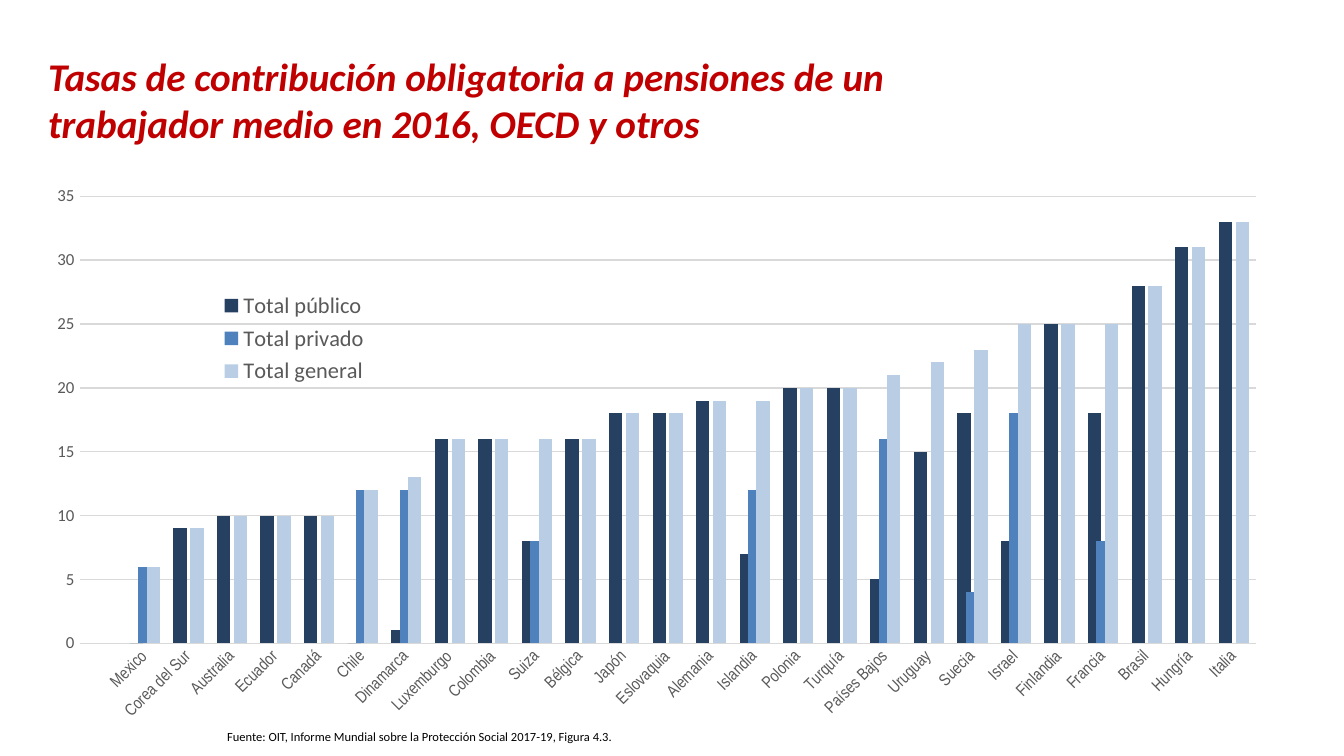
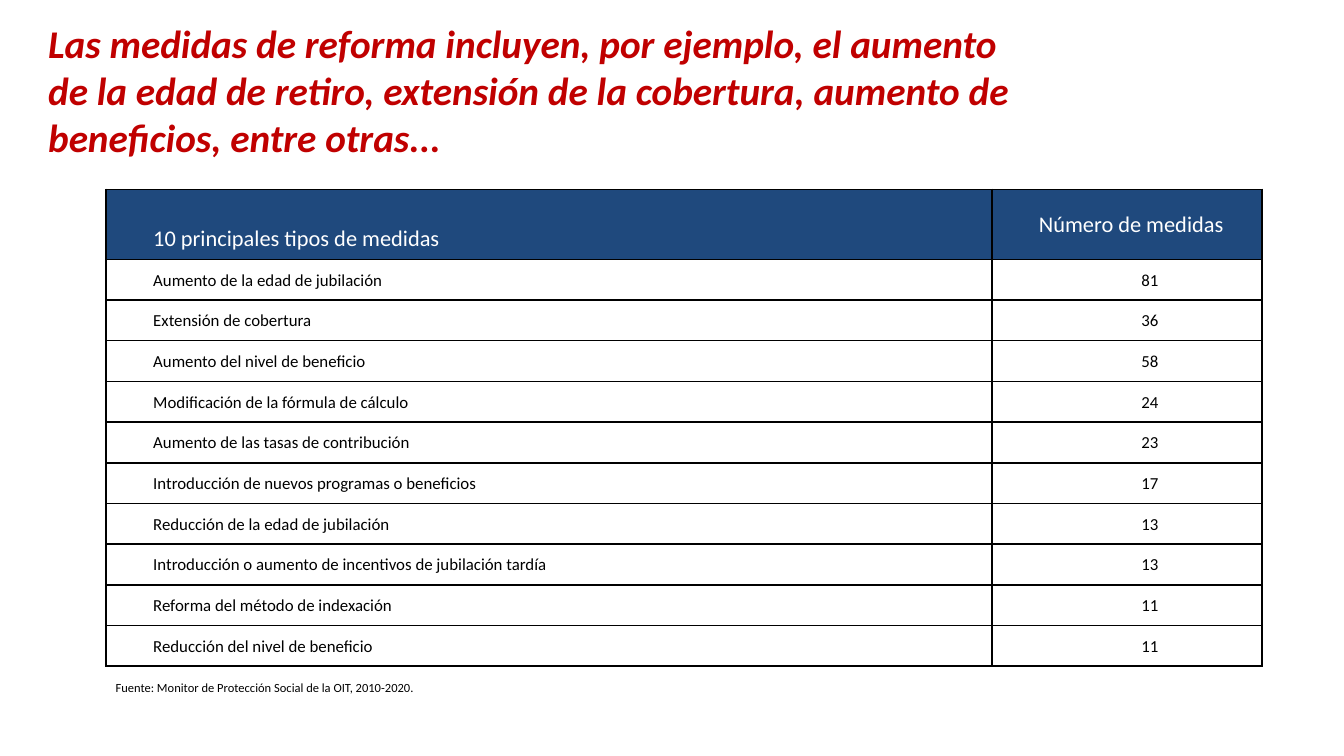
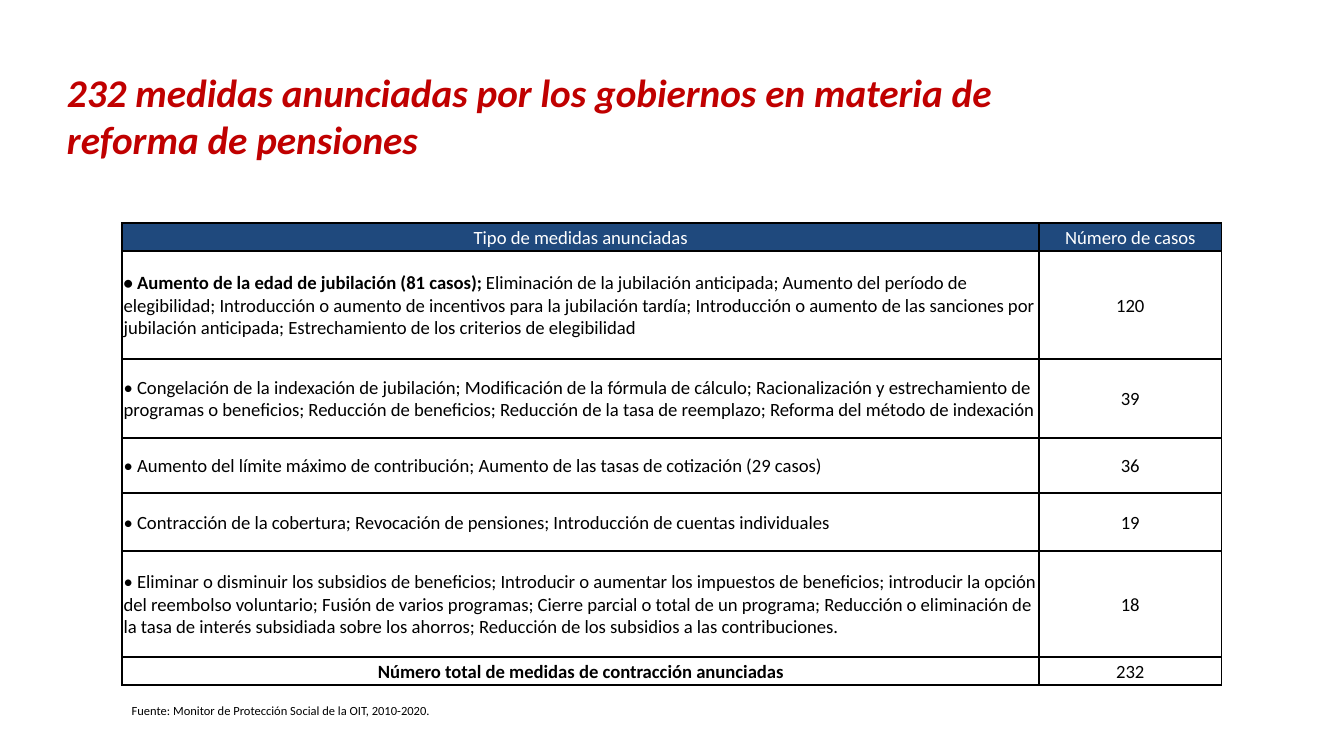
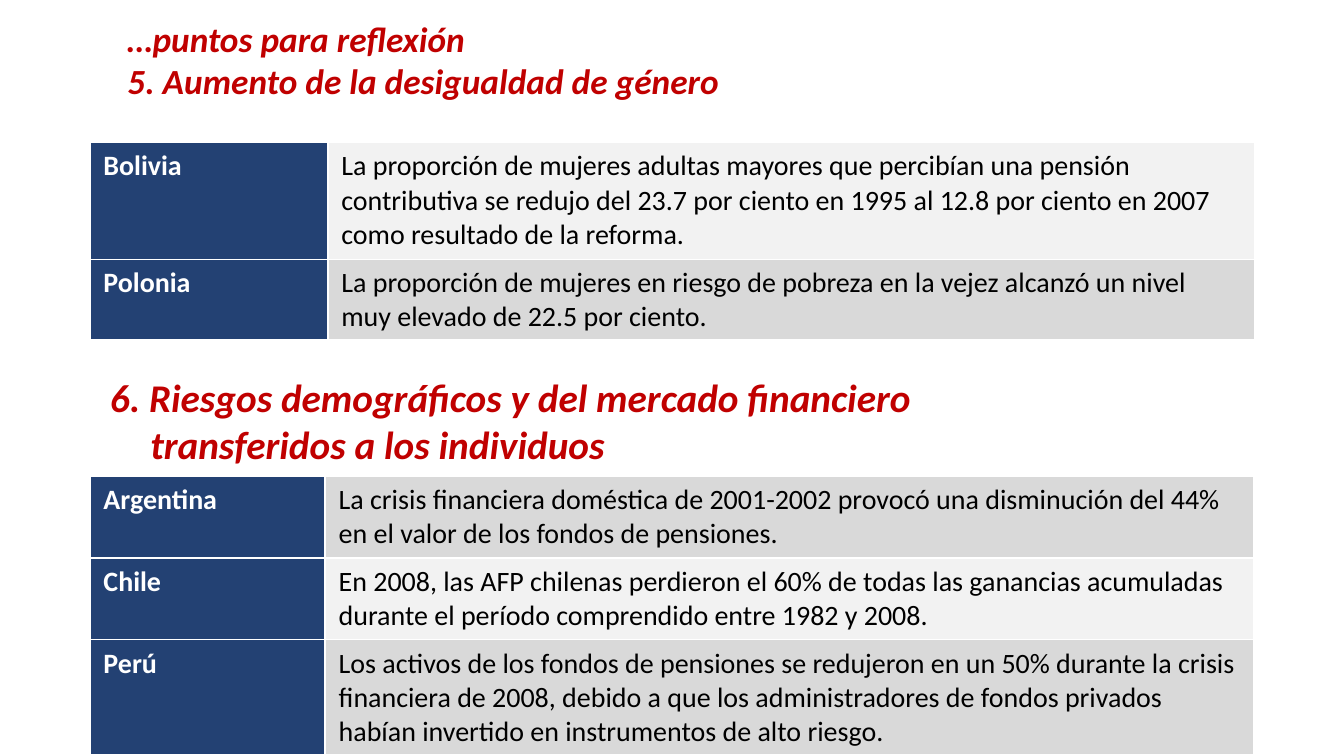
from pptx import Presentation
from pptx import util as u
from pptx.chart.data import CategoryChartData
from pptx.dml.color import RGBColor
from pptx.enum import chart as ch, text as tx
from pptx.oxml import parse_xml
from pptx.oxml.ns import nsdecls, qn

COLORS = {
    "title": "C00000", "ink": "000000", "paper": "FFFFFF", "header": "1F497D",
    "country": "234173", "light": "F2F2F2", "dark": "D9D9D9",
    "axis": "595959", "grid": "D9D9D9",
    "public": "254061", "private": "4F81BD", "total": "B9CDE5",
}
FONT = "Calibri"
SLIDE_WIDTH = 10
SLIDE_HEIGHT = SLIDE_WIDTH * 9 / 16
TITLE_SIZE = 21
MONITOR_SOURCE = "Fuente: Monitor de Protección Social de la OIT, 2010-2020."
LEFT, CENTER = tx.PP_ALIGN.LEFT, tx.PP_ALIGN.CENTER
MIDDLE, TOP = tx.MSO_ANCHOR.MIDDLE, tx.MSO_ANCHOR.TOP

RATES_TITLE = "Tasas de contribución obligatoria a pensiones de un trabajador medio en 2016, OECD y otros"
RATES_SOURCE = "Fuente: OIT, Informe Mundial sobre la Protección Social 2017-19, Figura 4.3."
RATES_SERIES = [("Total público ", "public"), ("Total privado", "private"), ("Total general", "total")]
RATES = [
    ("", None, None, None),
    ("Mexico", 0, 6, 6),
    ("Corea del Sur", 9, None, 9),
    ("Australia", 10, None, 10),
    ("Ecuador", 10, None, 10),
    ("Canadá", 10, None, 10),
    ("Chile", 0, 12, 12),
    ("Dinamarca", 1, 12, 13),
    ("Luxemburgo", 16, None, 16),
    ("Colombia", 16, None, 16),
    ("Suiza", 8, 8, 16),
    ("Bélgica", 16, None, 16),
    ("Japón", 18, None, 18),
    ("Eslovaquia", 18, None, 18),
    ("Alemania", 19, None, 19),
    ("Islandia", 7, 12, 19),
    ("Polonia", 20, None, 20),
    ("Turquía", 20, None, 20),
    ("Países Bajos", 5, 16, 21),
    ("Uruguay", 15, None, 22),
    ("Suecia", 18, 4, 23),
    ("Israel", 8, 18, 25),
    ("Finlandia", 25, None, 25),
    ("Francia", 18, 8, 25),
    ("Brasil", 28, None, 28),
    ("Hungría", 31, None, 31),
    ("Italia", 33, None, 33),
]

REFORMS_TITLE = ("Las medidas de reforma incluyen, por ejemplo, el aumento de la edad de retiro, "
                 "extensión de la cobertura, aumento de beneficios, entre otras...")
REFORMS = [
    ("10 principales tipos de medidas", "Número de medidas"),
    ("Aumento de la edad de jubilación", "81"),
    ("Extensión de cobertura", "36"),
    ("Aumento del nivel de beneficio", "58"),
    ("Modificación de la fórmula de cálculo", "24"),
    ("Aumento de las tasas de contribución", "23"),
    ("Introducción de nuevos programas o beneficios", "17"),
    ("Reducción de la edad de jubilación", "13"),
    ("Introducción o aumento de incentivos de jubilación tardía", "13"),
    ("Reforma del método de indexación", "11"),
    ("Reducción del nivel de beneficio", "11"),
]
REFORMS_HEIGHT, REFORMS_HEADER = 3.55, 0.52

CASES_TITLE = "232 medidas anunciadas por los gobiernos en materia de reforma de pensiones"
CASES_LEAD = "• Aumento de la edad de jubilación (81 casos); "
CASES = [
    ("Tipo de medidas anunciadas", "Número de casos"),
    (CASES_LEAD + "Eliminación de la jubilación anticipada; Aumento del período de elegibilidad; "
     "Introducción o aumento de incentivos para la jubilación tardía; Introducción o aumento de las "
     "sanciones por jubilación anticipada; Estrechamiento de los criterios de elegibilidad", "120"),
    ("• Congelación de la indexación de jubilación; Modificación de la fórmula de cálculo; "
     "Racionalización y estrechamiento de programas o beneficios; Reducción de beneficios; "
     "Reducción de la tasa de reemplazo; Reforma del método de indexación", "39"),
    ("• Aumento del límite máximo de contribución; Aumento de las tasas de cotización (29 casos)", "36"),
    ("• Contracción de la cobertura; Revocación de pensiones; Introducción de cuentas individuales", "19"),
    ("• Eliminar o disminuir los subsidios de beneficios; Introducir o aumentar los impuestos de "
     "beneficios; introducir la opción del reembolso voluntario; Fusión de varios programas; Cierre "
     "parcial o total de un programa; Reducción o eliminación de la tasa de interés subsidiada sobre "
     "los ahorros; Reducción de los subsidios a las contribuciones.", "18"),
    ("Número total de medidas de contracción anunciadas", "232"),
]
CASES_HEIGHTS = [0.21, 0.8, 0.59, 0.41, 0.43, 0.79, 0.21]

GENDER_TITLE = "…puntos para reflexión\n5. Aumento de la desigualdad de género"
GENDER = [
    ("Bolivia", "La proporción de mujeres adultas mayores que percibían una pensión contributiva se "
     "redujo del 23.7 por ciento en 1995 al 12.8 por ciento en 2007 como resultado de la reforma."),
    ("Polonia", "La proporción de mujeres en riesgo de pobreza en la vejez alcanzó un nivel muy "
     "elevado de 22.5 por ciento."),
]
RISKS_TITLE = "6. Riesgos demográficos y del mercado financiero transferidos a los individuos"
RISKS = [
    ("Argentina", "La crisis financiera doméstica de 2001-2002 provocó una disminución del 44% en el "
     "valor de los fondos de pensiones."),
    ("Chile", "En 2008, las AFP chilenas perdieron el 60% de todas las ganancias acumuladas durante "
     "el período comprendido entre 1982 y 2008."),
    ("Perú", "Los activos de los fondos de pensiones se redujeron en un 50% durante la crisis "
     "financiera de 2008, debido a que los administradores de fondos privados habían invertido en "
     "instrumentos de alto riesgo."),
]


def rgb(name):
    return RGBColor.from_string(COLORS[name])


def set_font(font, size, color, bold=False, italic=False, name=FONT):
    font.name, font.size = name, u.Pt(size)
    font.bold, font.italic = bold, italic
    font.color.rgb = rgb(color)


def set_margins(target, margins):
    (target.margin_left, target.margin_top,
     target.margin_right, target.margin_bottom) = [u.Inches(m) for m in margins]


def add_text(slide, box, words, size, color, anchor=TOP, strong=False, margins=(0.1, 0.05, 0.1, 0.05)):
    frame = slide.shapes.add_textbox(*[u.Inches(v) for v in box]).text_frame
    frame.word_wrap = True
    frame.vertical_anchor = anchor
    set_margins(frame, margins)
    paragraph = frame.paragraphs[0]
    paragraph.text = words
    for run in paragraph.runs:
        set_font(run.font, size, color, strong, strong)
    return paragraph


def add_title(slide, box, words, size=TITLE_SIZE):
    return add_text(slide, box, words, size, "title", MIDDLE, True)


def add_source(slide, left, top, width, words=MONITOR_SOURCE):
    add_text(slide, (left, top, width, 0.19), words, 6.75, "ink", margins=(0.07, 0.04, 0.07, 0.04))


def set_borders(cell, color):
    properties = cell._tc.get_or_add_tcPr()
    for side in "LRTB":
        properties.append(parse_xml(
            f'<a:ln{side} {nsdecls("a")} w="12700"><a:solidFill>'
            f'<a:srgbClr val="{COLORS[color]}"/></a:solidFill></a:ln{side}>'))


def add_grid(slide, left, top, widths, heights, rows, border, style):
    box = [u.Inches(v) for v in (left, top, sum(widths), sum(heights))]
    table = slide.shapes.add_table(len(rows), len(widths), *box).table
    table.first_row = table.horz_banding = False
    for column, width in zip(table.columns, widths):
        column.width = u.Inches(width)
    for r, (row, height, entries) in enumerate(zip(table.rows, heights, rows)):
        row.height = u.Inches(height)
        for c, (cell, words) in enumerate(zip(row.cells, entries)):
            look = style(r, c)
            set_borders(cell, border)
            if look["fill"]:
                cell.fill.solid()
                cell.fill.fore_color.rgb = rgb(look["fill"])
            else:
                cell.fill.background()
            cell.vertical_anchor = look.get("anchor", MIDDLE)
            set_margins(cell, look["margins"])
            paragraph = cell.text_frame.paragraphs[0]
            paragraph.alignment = look.get("align", LEFT)
            lead = CASES_LEAD if words.startswith(CASES_LEAD) else ""
            for part, bold in ((lead, True), (words[len(lead):], look.get("bold", False))):
                if part:
                    run = paragraph.add_run()
                    run.text = part
                    set_font(run.font, look["size"], look["color"], bold)


def reforms_style(r, c):
    if r == 0:
        label = c == 0
        return dict(fill="header", color="paper", size=12,
                    anchor=tx.MSO_ANCHOR.BOTTOM if label else MIDDLE,
                    margins=(0.35, 0.01, 0.01, 0.05 if label else 0))
    return dict(fill=None, color="ink", size=9, margins=(0.35, 0.01, 0.01, 0),
                align=CENTER if c else LEFT)


def cases_style(r, c):
    last = r == len(CASES) - 1
    return dict(fill=None if r else "header", color="ink" if r else "paper", size=10,
                margins=(0.01, 0.01, 0.01, 0), bold=last and c == 0,
                align=CENTER if c or last or r == 0 else LEFT)


def country_style(bands):
    def style(r, c):
        return dict(fill=bands[r % 2] if c else "country", color="ink" if c else "paper",
                    size=15, bold=c == 0, anchor=TOP, margins=(0.1, 0.05, 0.1, 0.05))
    return style


def manual_layout(x, y, w, h, inner=False):
    target = '<c:layoutTarget val="inner"/>' if inner else ""
    sizes = "".join(f'<c:{k} val="{v}"/>' for k, v in zip("xywh", (x, y, w, h)))
    return parse_xml(f'<c:layout {nsdecls("c")}><c:manualLayout>{target}<c:xMode val="edge"/>'
                     f'<c:yMode val="edge"/>{sizes}</c:manualLayout></c:layout>')


def place(element, layout, index):
    for old in element.findall(qn("c:layout")):
        element.remove(old)
    element.insert(index, layout)


def add_rates_chart(slide, box):
    data = CategoryChartData(number_format="General")
    countries, *columns = zip(*RATES)
    data.categories = countries
    for (name, _), values in zip(RATES_SERIES, columns):
        data.add_series(name, values)
    chart = slide.shapes.add_chart(ch.XL_CHART_TYPE.COLUMN_CLUSTERED,
                                   *[u.Inches(v) for v in box], data).chart
    chart.has_title = False
    set_font(chart.font, 10, "ink")
    plot = chart.plots[0]
    plot.gap_width, plot.overlap, plot.vary_by_categories = 100, 37, False
    for series, (_, color) in zip(plot.series, RATES_SERIES):
        series.format.fill.solid()
        series.format.fill.fore_color.rgb = rgb(color)
        series.invert_if_negative = False

    country_axis, rate_axis = chart.category_axis, chart.value_axis
    for axis, name in ((country_axis, "Arial Narrow"), (rate_axis, FONT)):
        axis.major_tick_mark = axis.minor_tick_mark = ch.XL_TICK_MARK.NONE
        set_font(axis.tick_labels.font, 9, "axis", name=name)
    country_axis._element.find(qn("c:txPr")).find(qn("a:bodyPr")).set("rot", "-2700000")
    rate_axis.minimum_scale, rate_axis.maximum_scale, rate_axis.major_unit = 0, 35, 5
    rate_axis.format.line.fill.background()
    for line in (country_axis.format.line, rate_axis.major_gridlines.format.line):
        line.color.rgb = rgb("grid")
        line.width = u.Pt(0.75)

    chart.has_legend = True
    legend = chart.legend
    legend.position = ch.XL_LEGEND_POSITION.BOTTOM
    legend.include_in_layout = False
    set_font(legend.font, 12, "axis")
    place(legend._element, manual_layout(0.14, 0.19, 0.14, 0.18), 1)
    place(chart._chartSpace.chart.plotArea, manual_layout(0.036, 0.035, 0.947, 0.771, True), 0)


def main():
    deck = Presentation()
    deck.slide_width, deck.slide_height = u.Inches(SLIDE_WIDTH), u.Inches(SLIDE_HEIGHT)
    rates, reforms, cases, reflection = [deck.slides.add_slide(deck.slide_layouts[6]) for _ in range(4)]

    chart_top = 1.31
    add_rates_chart(rates, (0.26, chart_top, 9.24, SLIDE_HEIGHT - chart_top))
    add_title(rates, (0.26, 0.14, 7.66, 1.19), RATES_TITLE)
    add_source(rates, 1.62, 5.38, 4.44, RATES_SOURCE)

    add_title(reforms, (0.26, 0.07, 7.56, 1.19), REFORMS_TITLE)
    measures = len(REFORMS) - 1
    reform_heights = [REFORMS_HEADER] + [(REFORMS_HEIGHT - REFORMS_HEADER) / measures] * measures
    add_grid(reforms, 0.79, 1.41, (6.59, 2.01), reform_heights, REFORMS, "ink", reforms_style)
    add_source(reforms, 0.79, 5.02, 4.87)

    add_title(cases, (0.4, 0.26, 7.31, 1.19), CASES_TITLE)
    add_grid(cases, 0.91, 1.66, (6.82, 1.36), CASES_HEIGHTS, CASES, "ink", cases_style)
    add_source(cases, 0.91, 5.19, 4.87)

    add_title(reflection, (0.85, 0.06, 6.97, 0.76), GENDER_TITLE, 18.9)
    risks_title = add_title(reflection, (0.72, 2.75, 7.27, 0.76), RISKS_TITLE)
    hanging = risks_title._p.get_or_add_pPr()
    hanging.set("marL", str(u.Inches(0.3)))
    hanging.set("indent", str(-u.Inches(0.3)))
    add_grid(reflection, 0.67, 3.54, (1.75, 6.91), (0.61, 0.61, 0.86), RISKS, "paper",
             country_style(("dark", "light")))
    add_grid(reflection, 0.67, 1.06, (1.77, 6.9), (0.87, 0.6), GENDER, "paper",
             country_style(("light", "dark")))

    deck.save("out.pptx")


if __name__ == "__main__":
    main()
